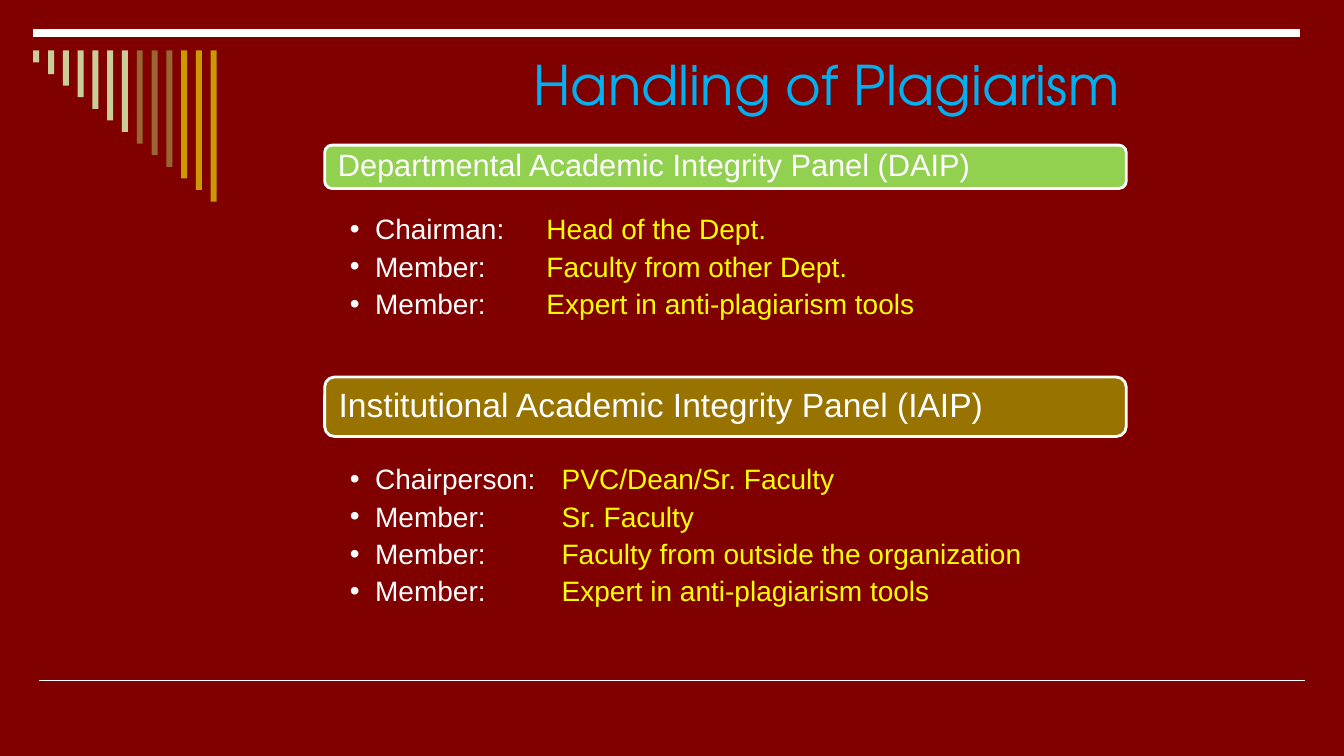
from lxml import etree
from pptx import Presentation
from pptx.dml.color import RGBColor
from pptx.enum import shapes, text
from pptx.oxml import ns
from pptx.util import Inches, Pt

WHITE = "FFFFFF"
YELLOW = "FFFF00"
BAR_COLOURS = ["CCCC99"] * 7 + ["996633"] * 3 + ["CC9900"] * 3
PANEL_LEFT = 3.22
PANEL_WIDTH = 7.95
DEPARTMENTAL_MEMBERS = [
    ("Chairman:", "Head of the Dept."),
    ("Member:", "Faculty from other Dept."),
    ("Member:", "Expert in anti-plagiarism tools"),
]
INSTITUTIONAL_MEMBERS = [
    ("Chairperson:", "PVC/Dean/Sr. Faculty"),
    ("Member:", "Sr. Faculty"),
    ("Member:", "Faculty from outside the organization"),
    ("Member:", "Expert in anti-plagiarism tools"),
]


def colour(value):
    return RGBColor.from_string(value)


def format_run(run, size, value, font="Arial"):
    run.font.name = font
    run.font.size = Pt(size)
    run.font.color.rgb = colour(value)


def set_frame(frame, anchor, left=0.1, right=0.1, vertical=0):
    frame.word_wrap = True
    frame.vertical_anchor = anchor
    frame.margin_left, frame.margin_right = Inches(left), Inches(right)
    frame.margin_top = frame.margin_bottom = Inches(vertical)


def add_rule(slide, left, top, right, weight):
    rule = slide.shapes.add_connector(
        shapes.MSO_CONNECTOR.STRAIGHT,
        Inches(left), Inches(top), Inches(right), Inches(top))
    rule.line.color.rgb = colour(WHITE)
    rule.line.width = Pt(weight)
    etree.SubElement(rule._element.spPr, ns.qn("a:effectLst"))


def add_block(slide, kind, left, top, width, height, fill):
    shape = slide.shapes.add_shape(
        kind, Inches(left), Inches(top), Inches(width), Inches(height))
    shape.shadow.inherit = False
    shape.fill.solid()
    shape.fill.fore_color.rgb = colour(fill)
    shape.line.fill.background()
    return shape


def add_bars(slide):
    for index, fill in enumerate(BAR_COLOURS):
        add_block(slide, shapes.MSO_SHAPE.RECTANGLE, 0.33 + index * 1.76 / 12,
                  0.5, 0.06, 0.12 + index * 0.115, fill)


def add_title(slide, title):
    box = slide.shapes.add_textbox(
        Inches(3.53), Inches(0.12), Inches(7.67), Inches(1.42))
    set_frame(box.text_frame, text.MSO_ANCHOR.MIDDLE)
    box.text_frame.text = title
    paragraph = box.text_frame.paragraphs[0]
    paragraph.alignment = text.PP_ALIGN.RIGHT
    format_run(paragraph.runs[0], 39, "00B0F0", "TeX Gyre Adventor")


def add_heading(slide, heading, top, height, fill, size):
    shape = add_block(slide, shapes.MSO_SHAPE.ROUNDED_RECTANGLE,
                      PANEL_LEFT, top, PANEL_WIDTH, height, fill)
    shape.line.color.rgb = colour(WHITE)
    shape.line.width = Pt(2)
    set_frame(shape.text_frame, text.MSO_ANCHOR.MIDDLE, left=0.11)
    shape.text_frame.text = heading
    paragraph = shape.text_frame.paragraphs[0]
    paragraph.alignment = text.PP_ALIGN.LEFT
    paragraph.line_spacing = 0.9
    format_run(paragraph.runs[0], size, WHITE)


def add_bullet(paragraph, tab_position):
    properties = paragraph._p.get_or_add_pPr()
    properties.set("marL", str(Inches(0.25)))
    properties.set("indent", str(-Inches(0.25)))
    bullet_colour = etree.SubElement(properties, ns.qn("a:buClr"))
    etree.SubElement(bullet_colour, ns.qn("a:srgbClr"), val=WHITE)
    etree.SubElement(properties, ns.qn("a:buFont"), typeface="Arial")
    etree.SubElement(properties, ns.qn("a:buChar"), char="•")
    tabs = etree.SubElement(properties, ns.qn("a:tabLst"))
    etree.SubElement(tabs, ns.qn("a:tab"),
                     pos=str(Inches(tab_position)), algn="l")


def add_members(slide, members, top, height, tab_position):
    box = slide.shapes.add_textbox(
        Inches(PANEL_LEFT), Inches(top), Inches(PANEL_WIDTH), Inches(height))
    frame = box.text_frame
    set_frame(frame, text.MSO_ANCHOR.TOP, 0.25, 0.16, 0.03)
    frame.text = "\n".join(role + "\t" for role, person in members)
    for paragraph, (role, person) in zip(frame.paragraphs, members):
        paragraph.line_spacing = 0.9
        paragraph.space_after = Pt(5)
        add_bullet(paragraph, tab_position)
        format_run(paragraph.runs[0], 20, WHITE)
        run = paragraph.add_run()
        run.text = person
        format_run(run, 20, YELLOW)


def main():
    presentation = Presentation()
    presentation.slide_width = Inches(13.33)
    presentation.slide_height = Inches(7.5)
    slide = presentation.slides.add_slide(presentation.slide_layouts[6])
    slide.background.fill.solid()
    slide.background.fill.fore_color.rgb = colour("800000")

    add_rule(slide, 0.39, 6.75, 12.94, 1)
    add_rule(slide, 0.33, 0.33, 12.89, 6)
    add_bars(slide)
    add_title(slide, "Handling of Plagiarism")
    add_heading(slide, "Departmental Academic Integrity Panel (DAIP)",
                1.44, 0.43, "92D050", 22)
    add_members(slide, DEPARTMENTAL_MEMBERS, 2.11, 1.5, 1.95)
    add_heading(slide, "Institutional Academic Integrity Panel (IAIP)",
                3.74, 0.59, "997300", 24)
    add_members(slide, INSTITUTIONAL_MEMBERS, 4.59, 1.86, 2.1)
    presentation.save("out.pptx")


if __name__ == "__main__":
    main()
